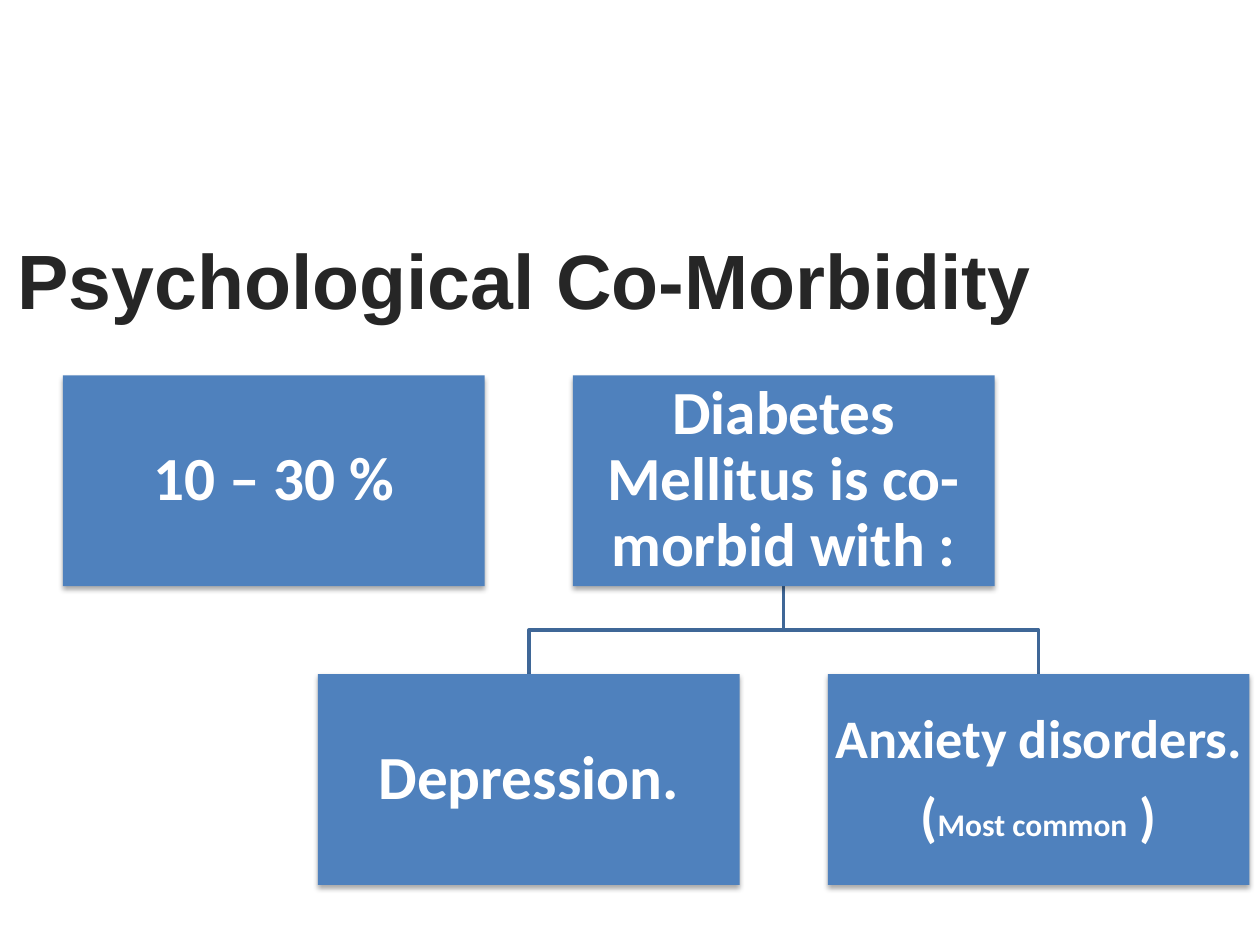
from lxml import etree
from pptx import Presentation
from pptx.dml.color import RGBColor as RGB
from pptx.enum.shapes import MSO_SHAPE as Shape
from pptx.enum.text import MSO_ANCHOR as Anchor, PP_ALIGN as Align
from pptx.oxml.ns import qn
from pptx.util import Cm, Pt

BLUE, LINE, WHITE, DARK = "4F81BD", "3F6797", "FFFFFF", "262626"

# Box grid: neighbouring rows are shifted by half a column step
WIDTH, HEIGHT = 8.5, 4.25
LEFT, HALF = 1.27, 5.14
TOP, DROP = 7.57, 6.02


def paint(color, value):
    color.rgb = RGB.from_string(value)


class Chart:
    """Holds the style and the current slide."""

    def __init__(self, slide):
        self.slide = slide

    def style(self, run, size, font, color):
        run.font.size, run.font.name, run.font.bold = Pt(size), font, True
        paint(run.font.color, color)

    def title(self, text):
        title = self.slide.shapes.title
        title.left, title.top = Cm(0.1), Cm(4.45)
        title.width, title.height = Cm(22.86), Cm(2.34)
        frame = title.text_frame
        frame.text = text
        frame.vertical_anchor = Anchor.MIDDLE
        para = frame.paragraphs[0]
        para.alignment = Align.LEFT
        self.style(para.runs[0], 44, "Arial", DARK)

    def shade(self, box):
        box.shadow.inherit = False
        effects = box._element.spPr.find(qn("a:effectLst"))
        outer = etree.SubElement(effects, qn("a:outerShdw"), blurRad=str(Pt(3.1)),
                                 dist=str(Pt(1.8)), dir="5400000", rotWithShape="0")
        color = etree.SubElement(outer, qn("a:srgbClr"), val="000000")
        etree.SubElement(color, qn("a:alpha"), val="35000")

    def box(self, col, row, lines):
        """Each line is a list of (text, size) runs."""
        box = self.slide.shapes.add_shape(
            Shape.RECTANGLE, Cm(LEFT + col * HALF), Cm(TOP + row * DROP),
            Cm(WIDTH), Cm(HEIGHT))
        box.fill.solid()
        paint(box.fill.fore_color, BLUE)
        box.line.fill.background()
        self.shade(box)
        frame = box.text_frame
        frame.word_wrap = True
        frame.vertical_anchor = Anchor.MIDDLE
        frame.margin_left = frame.margin_right = Cm(0.05)
        frame.margin_top = frame.margin_bottom = Cm(0.05)
        for i, parts in enumerate(lines):
            para = frame.add_paragraph() if i else frame.paragraphs[0]
            para.alignment, para.line_spacing = Align.CENTER, 0.9
            para.space_after = Pt(round(0.35 * parts[0][1]))
            for text, size in parts:
                run = para.add_run()
                run.text = text
                self.style(run, size, "Calibri", WHITE)

    def branch(self, start, end):
        """Elbow from a top-row column to a bottom-row column."""
        x, far = (Cm(LEFT + col * HALF + WIDTH / 2) for col in (start, end))
        y, low = Cm(TOP + HEIGHT), Cm(TOP + DROP)
        mid = (y + low) // 2
        build = self.slide.shapes.build_freeform(x, y)
        build.add_line_segments([(x, mid), (far, mid), (far, low)], close=False)
        elbow = build.convert_to_shape()
        elbow.fill.background()
        elbow.shadow.inherit = False
        elbow.line.width = Pt(2)
        paint(elbow.line.color, LINE)


def main():
    deck = Presentation()
    deck.slide_width, deck.slide_height = Cm(25.4), Cm(19.05)
    chart = Chart(deck.slides.add_slide(deck.slide_layouts[5]))

    # Heading
    chart.title("Psychological Co-Morbidity")

    # Branches lie behind the boxes
    for end in (3, 1):
        chart.branch(2, end)

    # Boxes: column, row, lines
    chart.box(0, 0, [[("10 – 30 %", 35)]])
    chart.box(2, 0, [[("Diabetes Mellitus is co-morbid with :", 35)]])
    chart.box(1, 1, [[("Depression.", 35)]])
    chart.box(3, 1, [[("Anxiety disorders.", 31)],
                     [("(", 31), ("Most common", 18), (" )", 31)]])

    deck.save("out.pptx")


if __name__ == "__main__":
    main()
